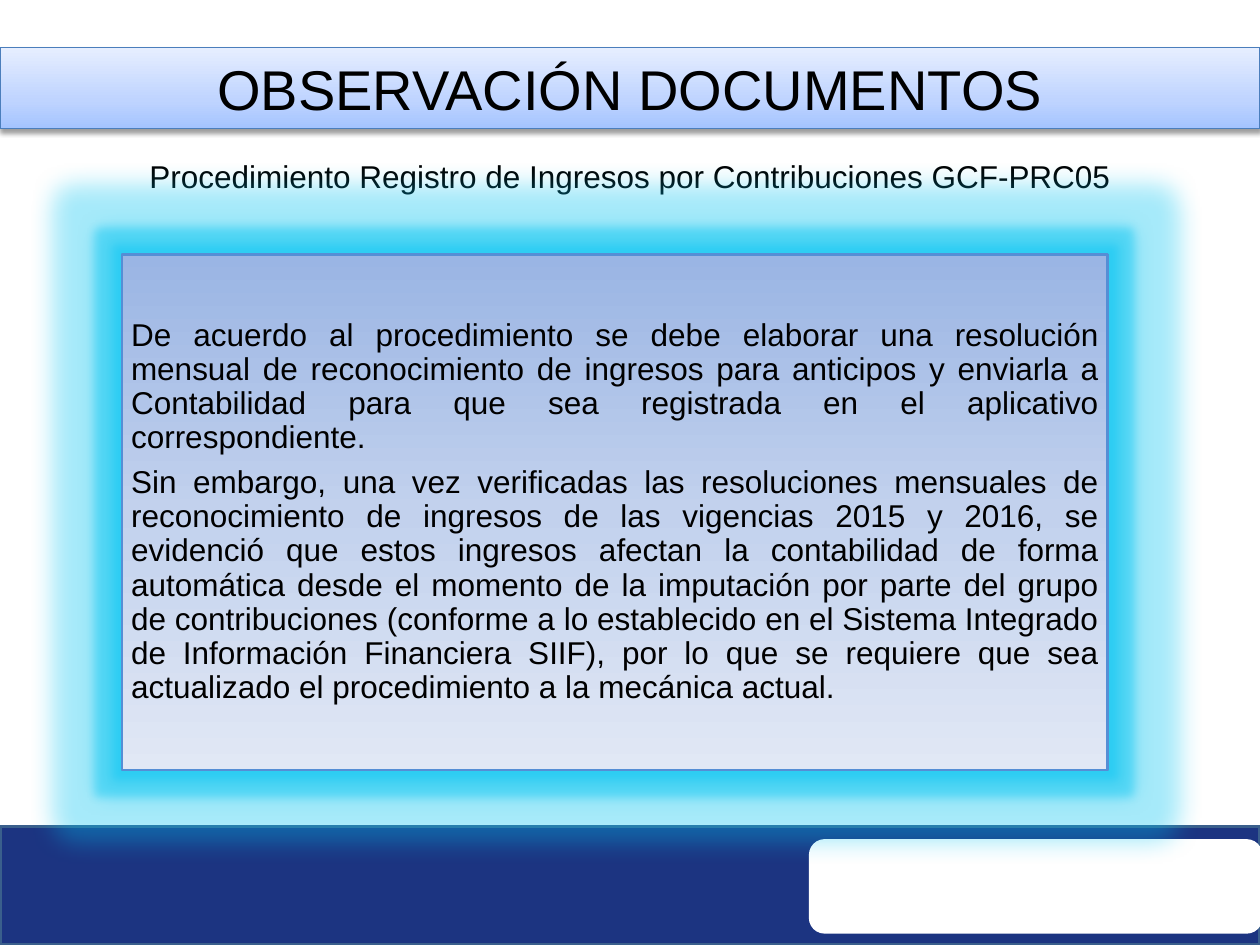
from dataclasses import dataclass

from lxml import etree
from pptx import Presentation
from pptx.dml.color import RGBColor
from pptx.enum.shapes import MSO_SHAPE
from pptx.enum.text import MSO_ANCHOR, PP_ALIGN
from pptx.oxml.ns import qn
from pptx.util import Inches, Pt

RECTANGLE = MSO_SHAPE.RECTANGLE
ROUNDED = MSO_SHAPE.ROUNDED_RECTANGLE
CENTER = PP_ALIGN.CENTER
JUSTIFY = PP_ALIGN.JUSTIFY
MIDDLE = MSO_ANCHOR.MIDDLE
FONT = "Arial"
BLACK = "000000"
GLOW_COLOR = "00C3F1"


@dataclass
class Box:
    left: float
    top: float
    width: float
    height: float

    def lengths(self):
        return [Inches(v) for v in (self.left, self.top, self.width, self.height)]


@dataclass
class Gradient:
    stops: list[tuple[int, str]]
    angle: int


FOOTER = Box(0, 6.56, 10, 0.94)
LOGO_PANEL = Box(6.42, 6.66, 3.6, 0.75)
TITLE = Box(0, 0.38, 10, 0.64)
SUBTITLE = Box(0.04, 1.2, 9.92, 0.4)
PANEL = Box(0.97, 2.02, 7.82, 4.09)
TITLE_FILL = Gradient([(0, "A4C4FF"), (35, "BFD4FF"), (100, "E6EEFF")], 270)
PANEL_FILL = Gradient([(0, "9AB5E4"), (50, "C2D1ED"), (100, "E1E8F5")], 90)

BODY = [
    "De acuerdo al procedimiento se debe elaborar una resolución mensual de "
    "reconocimiento de ingresos para anticipos y enviarla a Contabilidad para que "
    "sea registrada en el aplicativo correspondiente.",
    "Sin embargo, una vez verificadas las resoluciones mensuales de reconocimiento "
    "de ingresos de las vigencias 2015 y 2016, se evidenció que estos ingresos "
    "afectan la contabilidad de forma automática desde el momento de la imputación "
    "por parte del grupo de contribuciones (conforme a lo establecido en el Sistema "
    "Integrado de Información Financiera SIIF), por lo que se requiere que sea "
    "actualizado el procedimiento a la mecánica actual.",
]


def color(value: str) -> RGBColor:
    return RGBColor.from_string(value)


def add_color(parent, value: str, alpha: int = 100) -> None:
    element = etree.SubElement(parent, qn("a:srgbClr"), val=value)
    if alpha < 100:
        etree.SubElement(element, qn("a:alpha"), val=str(alpha * 1000))


def set_gradient(shape, gradient: Gradient) -> None:
    shape.fill.gradient()
    fill = shape.element.spPr.find(qn("a:gradFill"))
    stop_list = fill.find(qn("a:gsLst"))
    for stop in list(stop_list):
        stop_list.remove(stop)
    for position, value in gradient.stops:
        stop = etree.SubElement(stop_list, qn("a:gs"), pos=str(position * 1000))
        add_color(stop, value)
    fill.find(qn("a:lin")).set("ang", str(gradient.angle * 60000))


def style(shape, fill: str | Gradient, line: str | None = None, width: float = 1) -> None:
    if isinstance(fill, Gradient):
        set_gradient(shape, fill)
    else:
        shape.fill.solid()
        shape.fill.fore_color.rgb = color(fill)
    if line:
        shape.line.color.rgb = color(line)
        shape.line.width = Pt(width)
    else:
        shape.line.fill.background()


def add_shape(slide, kind, box: Box, fill, line: str | None = None, width: float = 1):
    shape = slide.shapes.add_shape(kind, *box.lengths())
    shape.shadow.inherit = False
    style(shape, fill, line, width)
    return shape


def add_effect(shape, name: str, value: str, alpha: int, **settings: int) -> None:
    shape.shadow.inherit = False
    effects = shape.element.spPr.find(qn("a:effectLst"))
    attributes = {key: str(int(number)) for key, number in settings.items()}
    effect = etree.SubElement(effects, qn(name), attributes)
    add_color(effect, value, alpha)


def set_text(shape, lines: list[str], size: float, alignment) -> None:
    frame = shape.text_frame
    frame.word_wrap = True
    frame.text = "\n".join(lines)
    for paragraph in frame.paragraphs:
        paragraph.alignment = alignment
        for run in paragraph.runs:
            run.font.name = FONT
            run.font.size = Pt(size)
            run.font.color.rgb = color(BLACK)


def main() -> None:
    presentation = Presentation()
    presentation.slide_width = Inches(10)
    presentation.slide_height = Inches(7.5)
    slide = presentation.slides.add_slide(presentation.slide_layouts[6])

    # Footer band
    add_shape(slide, RECTANGLE, FOOTER, "1C3481", "3A5F8C", 2)
    add_shape(slide, ROUNDED, LOGO_PANEL, "FFFFFF")

    # Title and subtitle
    title = add_shape(slide, RECTANGLE, TITLE, TITLE_FILL, "4B7EBC", 0.75)
    add_effect(title, "a:outerShdw", BLACK, 38,
               blurRad=Pt(3.1), dist=Pt(1.6), dir=90 * 60000)
    set_text(title, ["OBSERVACIÓN DOCUMENTOS"], 32, CENTER)
    subtitle = slide.shapes.add_textbox(*SUBTITLE.lengths())
    set_text(subtitle, ["Procedimiento Registro de Ingresos por Contribuciones GCF-PRC05"],
             18, CENTER)

    # Body panel: a wide glow behind, a narrow one around the text
    panel = add_shape(slide, RECTANGLE, PANEL, PANEL_FILL, "558ED5", 1.25)
    body = slide.shapes.add_textbox(*PANEL.lengths())
    style(body, PANEL_FILL, "558ED5", 1.25)
    for shape, radius in ((panel, 0.38), (body, 0.14)):
        add_effect(shape, "a:glow", GLOW_COLOR, 35, rad=Inches(radius))

    set_text(body, BODY, 18, JUSTIFY)
    frame = body.text_frame
    frame.vertical_anchor = MIDDLE
    frame.margin_left = frame.margin_right = Inches(0.07)
    frame.margin_top = frame.margin_bottom = Inches(0.07)
    for paragraph in frame.paragraphs:
        paragraph.line_spacing = 0.9
        paragraph.space_after = Pt(6.3)

    presentation.save("out.pptx")


if __name__ == "__main__":
    main()
